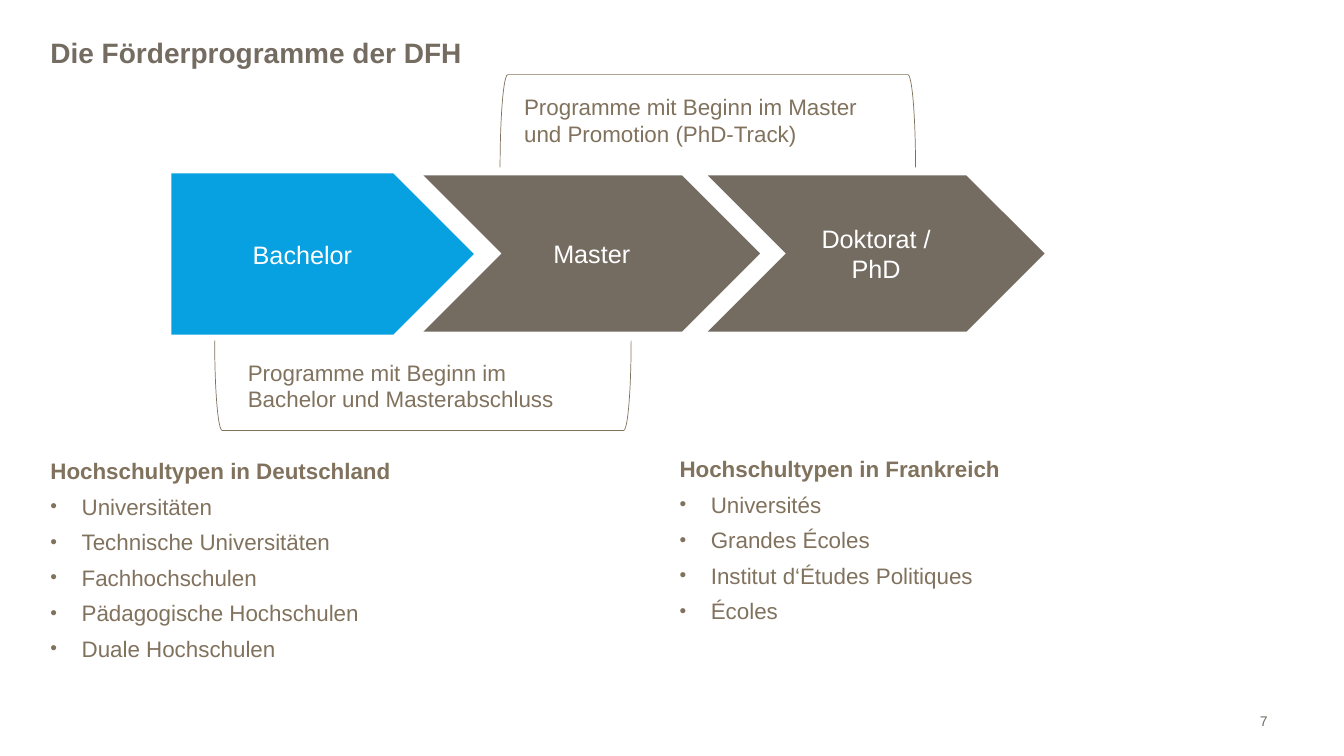
import pptx
import pptx.util
import pptx.dml.color
import pptx.enum.shapes
import pptx.enum.text
import pptx.oxml
import pptx.oxml.ns

Inches, Pt = pptx.util.Inches, pptx.util.Pt
SHAPE = pptx.enum.shapes.MSO_SHAPE
ALIGN = pptx.enum.text.PP_ALIGN
ANCHOR = pptx.enum.text.MSO_ANCHOR
AUTO = pptx.enum.text.MSO_AUTO_SIZE
COLORS = {"sand": "81725E", "stone": "746B61", "blue": "07A0E1", "white": "FFFFFF"}
INDENT = 0.31


def color(name):
    return pptx.dml.color.RGBColor.from_string(COLORS[name])


def add_bullet(para):
    props = para._p.get_or_add_pPr()
    props.set("marL", str(Inches(INDENT)))
    props.set("indent", str(-Inches(INDENT)))
    space = pptx.oxml.ns.nsdecls("a")
    for xml in (
        f'<a:buClr {space}><a:srgbClr val="{COLORS["sand"]}"/></a:buClr>',
        f'<a:buSzPct {space} val="85000"/>',
        f'<a:buFont {space} typeface="Arial"/>',
        f'<a:buChar {space} char="•"/>',
    ):
        props.append(pptx.oxml.parse_xml(xml))


def write(frame, text, first=True, size=16, ink="sand", bold=False,
          align=ALIGN.LEFT, bullet=False, line=None, before=0):
    para = frame.paragraphs[0] if first else frame.add_paragraph()
    if bullet:
        add_bullet(para)
    para.alignment = align
    if line:
        para.line_spacing = line
    if before:
        para.space_before = Pt(before)
    run = para.add_run()
    run.text = text
    run.font.name = "Arial"
    run.font.size = Pt(size)
    run.font.bold = bold
    run.font.color.rgb = color(ink)


def add_frame(slide, box, side=0.1, grow=True):
    """Add a wrapping text box and return its text frame."""
    frame = slide.shapes.add_textbox(*map(Inches, box)).text_frame
    frame.word_wrap = True
    frame.auto_size = AUTO.SHAPE_TO_FIT_TEXT if grow else AUTO.NONE
    frame.margin_left = frame.margin_right = Inches(side)
    return frame


def add_shape(slide, kind, box, fill, adjust):
    shape = slide.shapes.add_shape(kind, *map(Inches, box))
    shape.shadow.inherit = False
    shape.fill.solid()
    shape.fill.fore_color.rgb = color(fill)
    shape.line.fill.background()
    shape.adjustments[0] = adjust
    return shape


def add_title(slide, box, text):
    write(add_frame(slide, box, side=0), text, size=20, ink="stone", bold=True, line=0.8)


def add_list(slide, box, head, items):
    frame = add_frame(slide, box, side=0)
    write(frame, head, bold=True, line=0.8)
    for item in items:
        write(frame, item, first=False, bullet=True, line=0.8, before=10)


def add_arrow(slide, kind, box, text, fill):
    frame = add_shape(slide, kind, box, fill, 0.5).text_frame
    frame.word_wrap = True
    frame.vertical_anchor = ANCHOR.MIDDLE
    write(frame, text, size=18, ink="white", align=ALIGN.CENTER)


def add_track(slide, box, turn, text, inset):
    """Add a bracket turned on its side that fills the box, with its label."""
    left, top, width, height = box
    shift = (width - height) / 2
    upright = (left + shift, top - shift, height, width)
    bracket = add_shape(slide, SHAPE.LEFT_BRACKET, upright, "white", 0.083)
    bracket.rotation = turn
    bracket.line.color.rgb = color("sand")
    bracket.line.width = Pt(0.5)
    dx, dy, span = inset
    write(add_frame(slide, (left + dx, top + dy, span, 0.64)), text)


def add_stages(slide, left, top):
    """Add the three study stages and the two tracks that span them."""
    add_track(slide, (left + 0.43, top + 1.66, 4.13, 0.89), 270,
              "Programme mit Beginn im Bachelor und Masterabschluss", (0.23, 0.13, 3.69))
    add_track(slide, (left + 3.26, top - 0.98, 4.12, 0.92), 90,
              "Programme mit Beginn im Master und Promotion (PhD-Track)", (0.14, 0.14, 3.84))
    add_arrow(slide, SHAPE.PENTAGON, (left, top, 3, 1.6), "Bachelor", "blue")
    for i, text in enumerate(("Master", "Doktorat / PhD")):
        box = (left + 2.5 + i * 2.82, top + 0.02, 3.34, 1.55)
        add_arrow(slide, SHAPE.CHEVRON, box, text, "stone")


def add_number(slide, box, text):
    frame = add_frame(slide, box, grow=False)
    frame.vertical_anchor = ANCHOR.MIDDLE
    write(frame, text, size=10, ink="stone", align=ALIGN.RIGHT)


def main():
    deck = pptx.Presentation()
    deck.slide_width, deck.slide_height = Inches(13.33), Inches(7.5)
    slide = deck.slides.add_slide(deck.slide_layouts[6])
    add_title(slide, (0.5, 0.37, 9.5, 0.37), "Die Förderprogramme der DFH")
    add_stages(slide, 1.7, 1.72)
    add_list(slide, (0.5, 4.54, 6.08, 2.45), "Hochschultypen in Deutschland",
             ("Universitäten", "Technische Universitäten", "Fachhochschulen",
              "Pädagogische Hochschulen", "Duale Hochschulen"))
    add_list(slide, (6.74, 4.52, 6.08, 2.09), "Hochschultypen in Frankreich",
             ("Universités", "Grandes Écoles", "Institut d‘Études Politiques", "Écoles"))
    add_number(slide, (9.56, 6.95, 3.11, 0.4), "7")
    deck.save("out.pptx")


if __name__ == "__main__":
    main()
